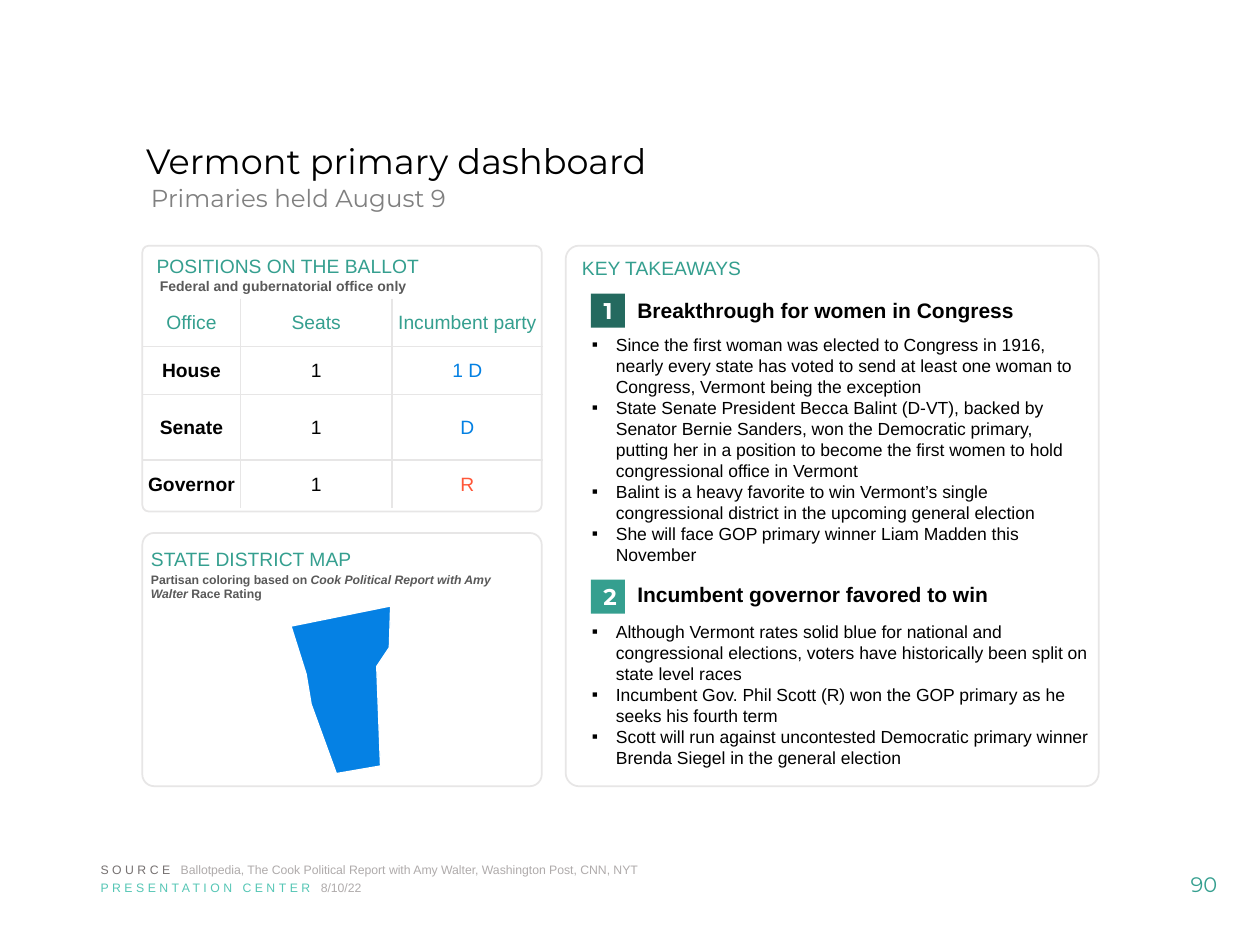
from lxml.etree import SubElement
from pptx import Presentation
from pptx.dml.color import RGBColor
from pptx.enum.shapes import MSO_SHAPE
from pptx.enum.text import MSO_ANCHOR, PP_ALIGN
from pptx.oxml.ns import qn
from pptx.util import Inches, Pt

TEAL = RGBColor(0x35, 0x9F, 0x8F)
DARK_TEAL = RGBColor(0x24, 0x6A, 0x5F)
LIGHT_TEAL = RGBColor(0x55, 0xC6, 0xB5)
BLACK = RGBColor(0x00, 0x00, 0x00)
WHITE = RGBColor(0xFF, 0xFF, 0xFF)
DARK_GRAY = RGBColor(0x59, 0x59, 0x59)
SOURCE_GRAY = RGBColor(0x76, 0x71, 0x71)
GRAY = RGBColor(0x80, 0x80, 0x80)
PALE_GRAY = RGBColor(0xAF, 0xAB, 0xAB)
BORDER = RGBColor(0xE7, 0xE6, 0xE6)
DEMOCRAT = RGBColor(0x03, 0x80, 0xE3)
REPUBLICAN = RGBColor(0xFF, 0x57, 0x39)
MAP_BLUE = RGBColor(0x05, 0x81, 0xE4)


def style(paragraph, size, color, bold=False, name="Arial", align=PP_ALIGN.LEFT):
    paragraph.alignment = align
    font = paragraph.font
    font.size, font.bold, font.name = Pt(size), bold, name
    font.color.rgb = color


def add_text(left, top, width, height, text, size, color, wrap=True, **options):
    box = slide.shapes.add_textbox(
        Inches(left), Inches(top), Inches(width), Inches(height))
    box.text_frame.word_wrap = wrap
    box.text_frame.text = text
    style(box.text_frame.paragraphs[0], size, color, **options)
    return box.text_frame


presentation = Presentation()
presentation.slide_width = Inches(10)
presentation.slide_height = Inches(7.5)
slide = presentation.slides.add_slide(presentation.slide_layouts[5])

# Title and subtitle
title = slide.shapes.title
title.left, title.top = Inches(1.06), Inches(0.9)
title.width, title.height = Inches(8.03), Inches(0.79)
title.text_frame.text = "Vermont primary dashboard"
title.text_frame.vertical_anchor = MSO_ANCHOR.MIDDLE
title.text_frame.paragraphs[0].line_spacing = 0.9
style(title.text_frame.paragraphs[0], 20, BLACK, name="Montserrat")
add_text(1.1, 1.4, 2.76, 0.34, "Primaries held August 9", 14, GRAY,
         wrap=False, name="Montserrat")

# Cards
cards = [
    (4.49, 1.95, 4.23, 4.29, 0.025, "KEY TAKEAWAYS"),
    (1.13, 4.23, 3.17, 2.01, 0.047, ""),
    (1.13, 1.95, 3.17, 2.11, 0.025, "POSITIONS ON THE BALLOT"),
]
for left, top, width, height, rounding, heading in cards:
    card = slide.shapes.add_shape(
        MSO_SHAPE.ROUNDED_RECTANGLE,
        Inches(left), Inches(top), Inches(width), Inches(height))
    card.adjustments[0] = rounding
    card.shadow.inherit = False
    card.fill.solid()
    card.fill.fore_color.rgb = WHITE
    card.line.color.rgb = BORDER
    card.line.width = Pt(1)
    if heading:
        card.text_frame.vertical_anchor = MSO_ANCHOR.TOP
        card.text_frame.text = heading
        style(card.text_frame.paragraphs[0], 11, TEAL)

# Positions table, with inner borders only
add_text(1.17, 2.15, 3, 0.19, "Federal and gubernatorial office only",
         8, DARK_GRAY, bold=True)
rows = [
    ("Office", "Seats", "Incumbent party"),
    ("House", "1", "1 D"),
    ("Senate", "1", "D"),
    ("Governor", "1", "R"),
]
party_colors = [TEAL, DEMOCRAT, DEMOCRAT, REPUBLICAN]
table = slide.shapes.add_table(
    4, 3, Inches(1.13), Inches(2.37), Inches(3.17), Inches(1.66)).table
table.first_row = table.horz_banding = False
for column, width in zip(table.columns, (0.78, 1.2, 1.2)):
    column.width = Inches(width)
for row, height in zip(table.rows, (0.38, 0.38, 0.52, 0.38)):
    row.height = Inches(height)
for r, values in enumerate(rows):
    for c, value in enumerate(values):
        cell = table.cell(r, c)
        cell.text = value
        cell.vertical_anchor = MSO_ANCHOR.MIDDLE
        cell.margin_left = cell.margin_right = cell.margin_top = Inches(0.01)
        cell.margin_bottom = 0
        color = TEAL if r == 0 else party_colors[r] if c == 2 else BLACK
        style(cell.text_frame.paragraphs[0], 11, color,
              bold=r > 0 and c == 0, align=PP_ALIGN.CENTER)
        properties = cell._tc.get_or_add_tcPr()
        inner_edges = {"a:lnL": c > 0, "a:lnR": c < 2, "a:lnT": r > 0, "a:lnB": r < 3}
        for tag, visible in inner_edges.items():
            edge = SubElement(properties, qn(tag), w=str(Pt(1)))
            if visible:
                fill = SubElement(edge, qn("a:solidFill"))
                SubElement(fill, qn("a:srgbClr"), val=str(BORDER))
            else:
                SubElement(edge, qn("a:noFill"))
        cell.fill.background()

# State district map
add_text(1.1, 4.29, 3.2, 0.29, "STATE DISTRICT MAP", 11, TEAL)
note = add_text(1.1, 4.49, 3.2, 0.34, "Partisan coloring based on ",
                7, DARK_GRAY, bold=True).paragraphs[0]
report = note.add_run()
report.text = "Cook Political Report with Amy Walter "
report.font.italic = True
note.add_run().text = "Race Rating"

outline = [(2.43, 5.35), (2.47, 5.59), (2.67, 6.14), (3.02, 6.08),
           (2.99, 5.29), (3.09, 5.14), (3.1, 4.81), (2.31, 4.97)]
points = [(Inches(x), Inches(y)) for x, y in outline]
builder = slide.shapes.build_freeform(*points[0])
builder.add_line_segments(points[1:], close=True)
vermont = builder.convert_to_shape()
vermont.shadow.inherit = False
vermont.fill.solid()
vermont.fill.fore_color.rgb = MAP_BLUE
vermont.line.color.rgb = WHITE
vermont.line.width = Pt(0.75)

# Key takeaways: numbered heading and bullets
takeaways = [
    ("1", DARK_TEAL, 2.33, 2.31, "Breakthrough for women in Congress", 2.6, 4.13, 1.95, [
        "Since the first woman was elected to Congress in 1916, nearly every state "
        "has voted to send at least one woman to Congress, Vermont being the exception",
        "State Senate President Becca Balint (D-VT), backed by Senator Bernie Sanders, "
        "won the Democratic primary, putting her in a position to become the first "
        "women to hold congressional office in Vermont",
        "Balint is a heavy favorite to win Vermont’s single congressional district "
        "in the upcoming general election",
        "She will face GOP primary winner Liam Madden this November",
    ]),
    ("2", TEAL, 4.6, 4.57, "Incumbent governor favored to win", 4.88, 4.23, 1.62, [
        "Although Vermont rates solid blue for national and congressional elections, "
        "voters have historically been split on state level races",
        "Incumbent Gov. Phil Scott (R) won the GOP primary as he seeks his fourth term",
        "Scott will run against uncontested Democratic primary winner Brenda Siegel "
        "in the general election",
    ]),
]
for (number, color, badge_top, heading_top, heading,
     body_top, body_width, body_height, bullets) in takeaways:
    badge = slide.shapes.add_shape(
        MSO_SHAPE.RECTANGLE, Inches(4.69), Inches(badge_top), Inches(0.27), Inches(0.27))
    badge.shadow.inherit = False
    badge.fill.solid()
    badge.fill.fore_color.rgb = color
    badge.line.fill.background()
    badge.text_frame.text = number
    style(badge.text_frame.paragraphs[0], 13, WHITE, bold=True,
          name="Montserrat", align=PP_ALIGN.CENTER)

    add_text(4.96, heading_top, 3.22, 0.3, heading, 12, BLACK, wrap=False, bold=True)

    body = slide.shapes.add_textbox(
        Inches(4.6), Inches(body_top), Inches(body_width), Inches(body_height)).text_frame
    body.word_wrap = True
    body.text = "\n".join(bullets)
    for paragraph in body.paragraphs:
        properties = paragraph._p.get_or_add_pPr()
        properties.set("marL", str(Inches(0.19)))
        properties.set("indent", str(-Inches(0.19)))
        SubElement(properties, qn("a:buFont"), typeface="Arial")
        SubElement(properties, qn("a:buChar"), char="▪")
        style(paragraph, 10, BLACK)

# Source, date and page number
footers = [
    (6.79, 5.57, "SOURCE ", SOURCE_GRAY,
     "Ballotpedia, The Cook Political Report with Amy Walter, Washington Post, CNN, NYT"),
    (6.94, 2.94, "PRESENTATION CENTER ", LIGHT_TEAL, "8/10/22"),
]
for top, width, label, color, detail in footers:
    paragraph = add_text(0.7, top, width, 0.22, label, 7, PALE_GRAY).paragraphs[0]
    label_run = paragraph.runs[0]
    label_run.font.color.rgb = color
    label_run._r.get_or_add_rPr().set("spc", "200")
    paragraph.add_run().text = detail
page_number = add_text(9.11, 6.82, 0.89, 0.4, "90", 12, TEAL,
                       name="Montserrat", align=PP_ALIGN.CENTER)
page_number.vertical_anchor = MSO_ANCHOR.MIDDLE

presentation.save("out.pptx")
